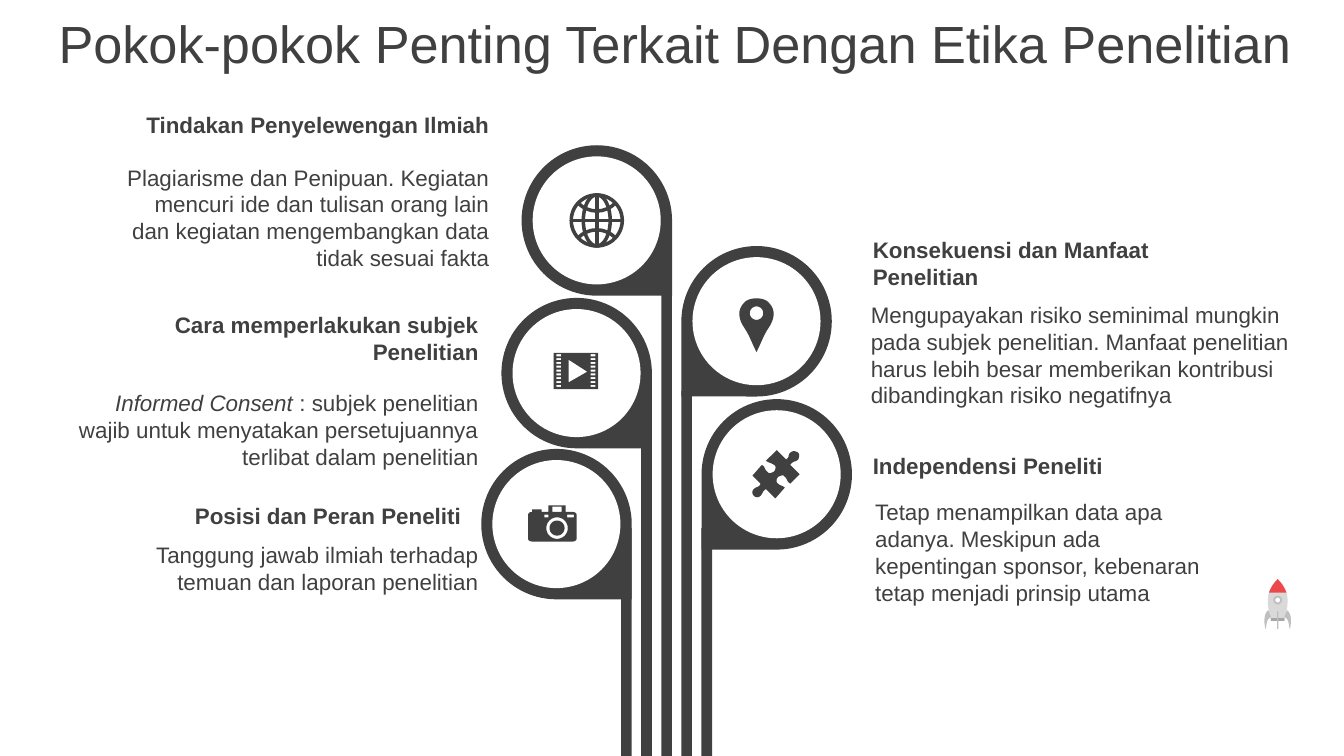
from math import cos, pi, sin

from pptx import Presentation, util as u
from pptx.dml.color import RGBColor
from pptx.enum import shapes as s, text as t

THEME = dict(font="Arial", ink="404040", paper="FFFFFF", red="EB494B",
             hull="D9D9D9", base="A6A6A6", fin="BFBFBF", head=28, body=12)
WIDE, HIGH = 720, 405
DROP, DISC, STEM, STEP = 80.6, 68.6, 5.7, 10.8
UNIT = 0.72

TITLE = "Pokok-pokok Penting Terkait Dengan Etika Penelitian"
NOTES = [
    ("left", 269.3, 56.2, 200, 1, True, "Tindakan Penyelewengan Ilmiah"),
    ("left", 269.3, 84.2, 215.3, 4, False,
     "Plagiarisme dan Penipuan. Kegiatan mencuri ide dan tulisan orang lain "
     "dan kegiatan mengembangkan data tidak sesuai fakta"),
    ("left", 263.5, 163.4, 200, 2, True, "Cara memperlakukan subjek Penelitian"),
    ("left", 263.5, 205.2, 234, 3, False,
     "*Informed Consent* : subjek penelitian wajib untuk menyatakan "
     "persetujuannya terlibat dalam penelitian"),
    ("left", 254.2, 265.3, 200, 1, True, "Posisi dan Peran Peneliti"),
    ("left", 263.5, 286.6, 200, 2, False,
     "Tanggung jawab ilmiah terhadap temuan dan laporan penelitian"),
    ("right", 460.5, 123.1, 200, 2, True, "Konsekuensi dan Manfaat Penelitian"),
    ("right", 459.4, 157.7, 260.6, 4, False,
     "Mengupayakan risiko seminimal mungkin pada subjek penelitian. Manfaat "
     "penelitian harus lebih besar memberikan kontribusi dibandingkan risiko "
     "negatifnya"),
    ("right", 460.5, 238.6, 200, 1, True, "Independensi Peneliti"),
    ("right", 461.8, 263.5, 200, 4, False,
     "Tetap menampilkan data apa adanya. Meskipun ada kepentingan sponsor, "
     "kebenaran tetap menjadi prinsip utama"),
]


def oval(x, y, a, b):
    return [(x + a * cos(k * pi / 24), y + b * sin(k * pi / 24)) for k in range(49)]


def rect(x, y, r, b):
    return [(x, y), (r, y), (r, b), (x, b), (x, y)]


def flip(path):
    return [tuple(-v if k % 2 == 0 else v for k, v in enumerate(p)) for p in path]


GLOBE = [oval(0, 0, 19, 19), oval(0, 0, 10, 19), [(-19, 0), (19, 0)],
         [(0, -19), (0, 19)], [(-14, -13), (-6, -5, 6, -5, 14, -13)],
         [(-14, 13), (-6, 5, 6, 5, 14, 13)]]
FILM = [rect(-17, -15, 16, 12), [(-6, -10), (-6, 7), (8, -1), (-6, -10)]] + [
    rect(x, -14 + 2.85 * k, x + 3.5, -12.5 + 2.85 * k)
    for x in (-15, 10.5) for k in range(9)]
CAMERA = [
    [(-21, -7), (-21, -8, -20, -9, -18, -9), (-18, -11), (-11, -11), (-11, -9),
     (-6, -9), (-6, -14), (7, -14), (7, -9), (12, -9), (14, -9, 15, -8, 15, -7),
     (15, 11), (15, 12, 14, 13, 12, 13), (-18, 13), (-20, 13, -21, 12, -21, 11),
     (-21, -7)],
    oval(0.5, 3, 8, 8), oval(0.5, 3, 5.6, 5.6),
    rect(-3, -13, 4, -9), rect(8, -7, 13, -5), rect(-9, -7, -6, -5)]
PIN = [[(0, -17), (4, -17, 7, -16, 9, -14), (15, -8, 13, -1, 9, 5),
        (5, 11, 4, 15, 0, 23), (-4, 15, -5, 11, -9, 5),
        (-13, -1, -15, -8, -9, -14), (-7, -16, -4, -17, 0, -17)],
       oval(0, -6, 5, 5)]
PUZZLE = [[
    (16, -16), (17, -15, 17, -13, 16, -11), (14, -9, 12, -10, 10, -7), (17, 0),
    (10, 7), (7, 5, 8, 3, 6, 2), (5, 0, 3, 1, 1, 2), (0, 3, -1, 6, 1, 7),
    (3, 9, 4, 8, 6, 10), (-1, 18), (-8, 11), (-11, 13, -10, 14, -12, 16),
    (-14, 18, -16, 17, -17, 16), (-18, 15, -19, 13, -17, 11),
    (-15, 9, -13, 10, -12, 7), (-18, 1), (-11, -7), (-8, -5, -9, -3, -7, -2),
    (-6, 0, -4, -1, -2, -2), (-1, -3, 0, -6, -2, -7), (-5, -9, -5, -8, -8, -10),
    (0, -18), (7, -11), (10, -13, 8, -14, 10, -16), (12, -18, 15, -17, 16, -16)]]
FIN = [(-7, 4), (-5, 9), (-9, 11, -8, 16, -9, 18), (-10, 15, -11, 7, -7, 4)]
ROCKET = [
    ([[(-5, 12), (-7, 3, -11, -10, 0, -19), (11, -10, 7, 3, 5, 12), (-5, 12)]],
     "hull", None),
    ([rect(-5, 10, 5, 12)], "base", None),
    ([[(0, -19), (3, -16, 5, -13, 6.5, -9), (-6.5, -9), (-5, -13, -3, -16, 0, -19)]],
     "red", None),
    ([oval(0, -3.5, 2.5, 2.5)], "paper", ("fin", 1)),
    ([rect(-0.5, 5, 0.5, 18)], "fin", None),
    ([FIN, flip(FIN)], "fin", None),
]
BRANCHES = [
    ("left", 0, 77.8, 149.8, GLOBE, None, ("ink", 1.9)),
    ("left", 1, 159.6, 209.5, FILM, "ink", None),
    ("left", 2, 240.5, 283, CAMERA, "ink", None),
    ("right", 0, 131.8, 209.5, PIN, "ink", None),
    ("right", 1, 213.8, 283, PUZZLE, "ink", None),
]


def hue(name):
    return RGBColor.from_string(THEME[name])


def put(obj, **vals):
    for key, val in vals.items():
        setattr(obj, key, val)


def paint(shape, fill, line=None):
    shape.shadow.inherit = False
    if fill:
        shape.fill.solid()
        shape.fill.fore_color.rgb = hue(fill)
    else:
        shape.fill.background()
    if line:
        shape.line.color.rgb = hue(line[0])
        shape.line.width = u.Pt(line[1])
    else:
        shape.line.fill.background()


def solid(slide, kind, box, fill, turn=0):
    shape = slide.shapes.add_shape(kind, *map(u.Pt, box))
    shape.rotation = turn
    paint(shape, fill)


def trace(path):
    pts = [path[0]]
    for step in path[1:]:
        if len(step) == 2:
            pts.append(step)
            continue
        a, b, c, d = pts[-1], step[:2], step[2:4], step[4:]
        for k in range(1, 9):
            q = k / 8
            p = 1 - q
            pts.append(tuple(p**3 * a[n] + 3 * p * p * q * b[n]
                             + 3 * p * q * q * c[n] + q**3 * d[n] for n in (0, 1)))
    return pts


def icon(slide, x, y, paths, fill, line):
    pen = None
    for path in paths:
        pts = [(u.Pt(x + a * UNIT), u.Pt(y + b * UNIT)) for a, b in trace(path)]
        if pen is None:
            pen = slide.shapes.build_freeform(*pts[0])
        else:
            pen.move_to(*pts[0])
        pen.add_line_segments(pts[1:], close=path[0] == path[-1])
    paint(pen.convert_to_shape(), fill, line)


def write(para, words, size, bold=False):
    for k, part in enumerate(words.split("*")):
        if part:
            run = para.add_run()
            run.text = part
            put(run.font, name=THEME["font"], size=u.Pt(THEME[size]),
                bold=bold, italic=k % 2 == 1)
            run.font.color.rgb = hue("ink")


def main():
    deck = Presentation()
    put(deck, slide_width=u.Pt(WIDE), slide_height=u.Pt(HIGH))
    slide = deck.slides.add_slide(deck.slide_layouts[5])

    title = slide.shapes.title
    put(title, left=u.Pt(1.4), top=u.Pt(0), width=u.Pt(WIDE), height=u.Pt(45.4))
    put(title.text_frame, vertical_anchor=t.MSO_ANCHOR.MIDDLE, word_wrap=True,
        auto_size=t.MSO_AUTO_SIZE.NONE)
    para = title.text_frame.paragraphs[0]
    put(para, alignment=t.PP_ALIGN.CENTER, space_before=u.Pt(5.6))
    write(para, TITLE, "head")

    kind = s.MSO_SHAPE
    gap = (DROP - DISC) / 2
    for side, row, top, foot, paths, fill, line in BRANCHES:
        left = side == "left"
        x = 279.4 - STEP * row if left else 365 + STEP * row
        stem = x + DROP - STEM if left else x
        solid(slide, kind.TEAR, (x, top, DROP, DROP), "ink", 90 if left else 180)
        solid(slide, kind.OVAL, (x + gap, top + gap, DISC, DISC), "paper")
        solid(slide, kind.RECTANGLE, (stem, foot, STEM, HIGH - foot), "ink")
        icon(slide, x + DROP / 2, top + DROP / 2, paths, fill, line)

    for part in ROCKET:
        icon(slide, 684.5, 324, *part)

    for side, edge, top, width, rows, bold, words in NOTES:
        left = side == "left"
        box = (edge - width if left else edge, top, width, 7.2 + 14.4 * rows)
        frame = slide.shapes.add_textbox(*map(u.Pt, box)).text_frame
        put(frame, word_wrap=True, auto_size=t.MSO_AUTO_SIZE.SHAPE_TO_FIT_TEXT)
        para = frame.paragraphs[0]
        para.alignment = t.PP_ALIGN.RIGHT if left else t.PP_ALIGN.LEFT
        write(para, words, "body", bold)

    deck.save("out.pptx")


if __name__ == "__main__":
    main()
